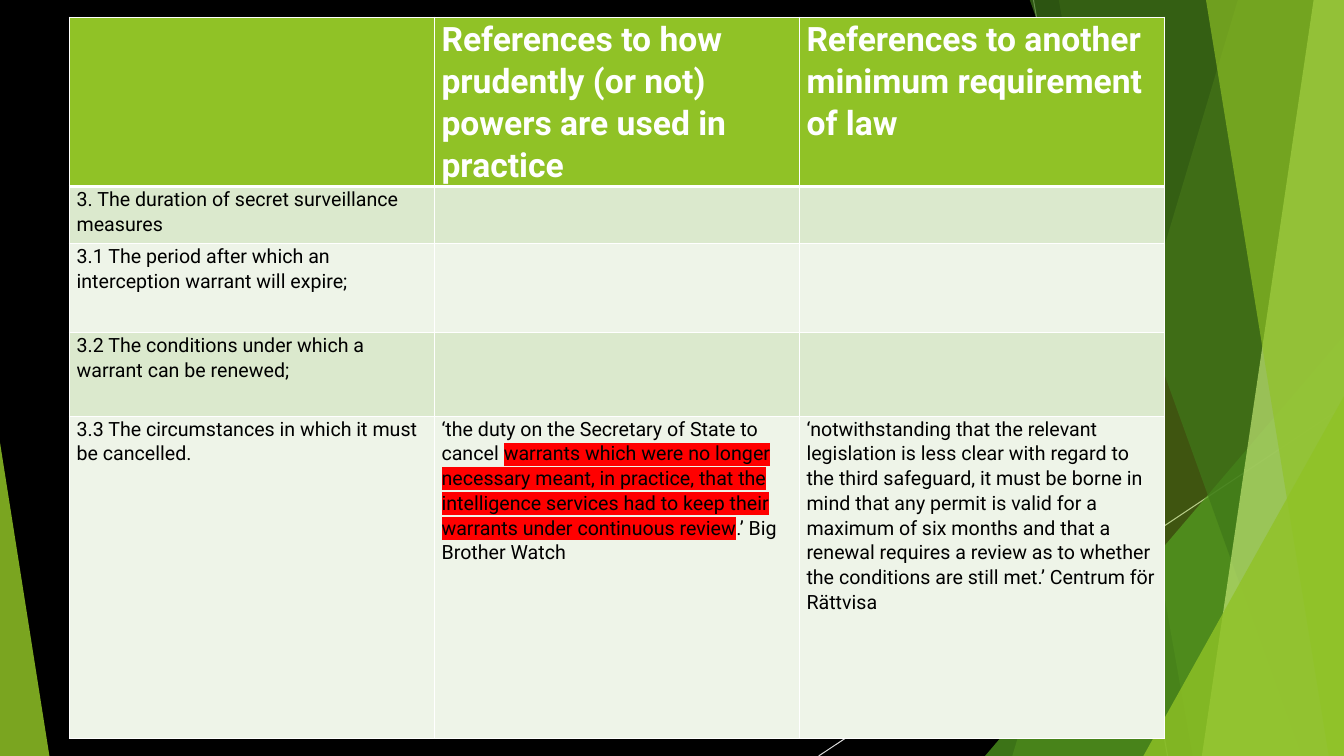
import dataclasses
import typing

import lxml.etree
import pptx
import pptx.dml.color
import pptx.enum.shapes
import pptx.oxml
import pptx.oxml.ns
import pptx.util

Inches = pptx.util.Inches
qn = pptx.oxml.ns.qn

HUES = {
    "black": "000000",
    "white": "FFFFFF",
    "red": "FF0000",
    "green": "90C226",
    "leaf": "54A021",
    "moss": "3F7819",
    "lime": "C0E474",
    "band": "DBE9CD",
    "pale": "EEF4E8",
    "grey": "BFBFBF",
    "light": "D9D9D9",
}
FONT = "Roboto"
WIDE, HIGH, TOP = 13.33, 7.5, -0.01


@dataclasses.dataclass
class Ray:
    start: tuple[float, float]
    end: tuple[float, float]
    hue: str


@dataclasses.dataclass
class Shard:
    top: float
    foot: float
    hue: str
    alpha: int


@dataclasses.dataclass
class Wedge:
    left: float
    top: float
    width: float
    peak: float
    hue: str
    alpha: int


@dataclasses.dataclass
class Part:
    text: str
    mark: bool = False


@dataclasses.dataclass
class Row:
    high: float
    hue: str
    cells: list[list[Part]]


DECOR = [
    Ray((10.25, 0), (11.58, HIGH), "grey"),
    Ray((WIDE, 4.03), (8.12, HIGH), "light"),
    Shard(12.28, 10.04, "green", 30),
    Shard(10.5, 11.83, "green", 20),
    Wedge(9.77, 3.33, 3.56, 1, "leaf", 72),
    Shard(10.21, 12.91, "moss", 70),
    Shard(13.03, 11.92, "lime", 70),
    Shard(11.96, 13.18, "green", 65),
    Wedge(11.34, 3.93, 1.99, 1, "green", 80),
    Wedge(0, 4.39, 0.49, 0, "green", 85),
]

ROWS = [
    Row(1.68, "green", [
        [],
        [Part("References to how prudently (or not) powers are used in practice")],
        [Part("References to another minimum requirement of law")],
    ]),
    Row(0.57, "band", [
        [Part("3. The duration of secret surveillance measures")], [], [],
    ]),
    Row(0.88, "pale", [
        [Part("3.1 The period after which an interception warrant will expire;")], [], [],
    ]),
    Row(0.83, "band", [
        [Part("3.2 The conditions under which a warrant can be renewed;")], [], [],
    ]),
    Row(3.2, "pale", [
        [Part("3.3 The circumstances in which it must be cancelled.")],
        [
            Part("‘the duty on the Secretary of State to cancel "),
            Part("warrants which were no longer necessary meant, in practice, that the "
                 "intelligence services had to keep their warrants under continuous review", True),
            Part(".’ Big Brother Watch"),
        ],
        [Part("‘notwithstanding that the relevant legislation is less clear with regard to "
              "the third safeguard, it must be borne in mind that any permit is valid for a "
              "maximum of six months and that a renewal requires a review as to whether the "
              "conditions are still met.’ Centrum för Rättvisa")],
    ]),
]


def tint(name: str) -> pptx.dml.color.RGBColor:
    return pptx.dml.color.RGBColor.from_string(HUES[name])


def paint(shape: typing.Any, hue: str, alpha: int) -> None:
    shape.shadow.inherit = False
    shape.fill.solid()
    shape.fill.fore_color.rgb = tint(hue)
    shape.line.fill.background()
    clr = shape.fill._xPr.find(qn("a:solidFill"))[0]
    lxml.etree.SubElement(clr, qn("a:alpha"), val=str(alpha * 1000))


def draw(shapes: typing.Any, item: Ray | Shard | Wedge) -> None:
    if isinstance(item, Ray):
        ends = [Inches(n) for n in (*item.start, *item.end)]
        line = shapes.add_connector(pptx.enum.shapes.MSO_CONNECTOR.STRAIGHT, *ends)
        line.line.color.rgb = tint(item.hue)
        line.line.width = pptx.util.Pt(0.75)
        lxml.etree.SubElement(line._element.spPr, qn("a:effectLst"))
    elif isinstance(item, Shard):
        path = shapes.build_freeform(Inches(item.top), Inches(TOP))
        spots = [(WIDE, TOP), (WIDE, HIGH), (item.foot, HIGH)]
        path.add_line_segments([(Inches(x), Inches(y)) for x, y in spots], close=True)
        paint(path.convert_to_shape(), item.hue, item.alpha)
    else:
        shape = shapes.add_shape(
            pptx.enum.shapes.MSO_SHAPE.ISOSCELES_TRIANGLE,
            Inches(item.left), Inches(item.top), Inches(item.width), Inches(HIGH - item.top))
        shape.adjustments[0] = item.peak
        paint(shape, item.hue, item.alpha)


def edge(cell: typing.Any, sides: dict[str, int]) -> None:
    props = cell._tc.get_or_add_tcPr()
    for spot, (side, width) in enumerate(sides.items()):
        line = lxml.etree.Element(qn(f"a:ln{side}"), w=str(pptx.util.Pt(width)))
        fill = lxml.etree.SubElement(line, qn("a:solidFill"))
        lxml.etree.SubElement(fill, qn("a:srgbClr"), val=HUES["white"])
        props.insert(spot, line)


def write(cell: typing.Any, parts: list[Part], head: bool) -> None:
    cell.margin_left = cell.margin_right = Inches(0.07)
    cell.margin_top = cell.margin_bottom = Inches(0)
    para = cell.text_frame.paragraphs[0]
    para.line_spacing = 1.07
    for part in parts:
        run = para.add_run()
        run.text = part.text
        run.font.size = pptx.util.Pt(24 if head else 14)
        run.font.bold = head
        run.font.name = FONT
        run.font.color.rgb = tint("white" if head else "black")
        if part.mark:
            mark = lxml.etree.Element(qn("a:highlight"))
            lxml.etree.SubElement(mark, qn("a:srgbClr"), val=HUES["red"])
            run.font._element.find(qn("a:solidFill")).addnext(mark)


def tabulate(shapes: typing.Any, rows: list[Row]) -> None:
    high = sum(row.high for row in rows)
    frame = shapes.add_table(
        len(rows), 3, Inches(0.69), Inches(0.17), Inches(10.86), Inches(high))
    table = frame.table
    for col in table.columns:
        col.width = Inches(3.62)
    for pos, row in enumerate(rows):
        table.rows[pos].height = Inches(row.high)
        sides = {"L": 1, "R": 1, "T": 3 if pos == 1 else 1, "B": 3 if pos == 0 else 1}
        for cell, parts in zip(table.rows[pos].cells, row.cells):
            cell.fill.solid()
            cell.fill.fore_color.rgb = tint(row.hue)
            edge(cell, sides)
            write(cell, parts, pos == 0)


def main() -> None:
    deck = pptx.Presentation()
    deck.slide_width, deck.slide_height = Inches(WIDE), Inches(HIGH)
    slide = deck.slides.add_slide(deck.slide_layouts[6])
    slide.background.fill.solid()
    slide.background.fill.fore_color.rgb = tint("black")
    for item in DECOR:
        draw(slide.shapes, item)
    tabulate(slide.shapes, ROWS)
    deck.save("out.pptx")


if __name__ == "__main__":
    main()
